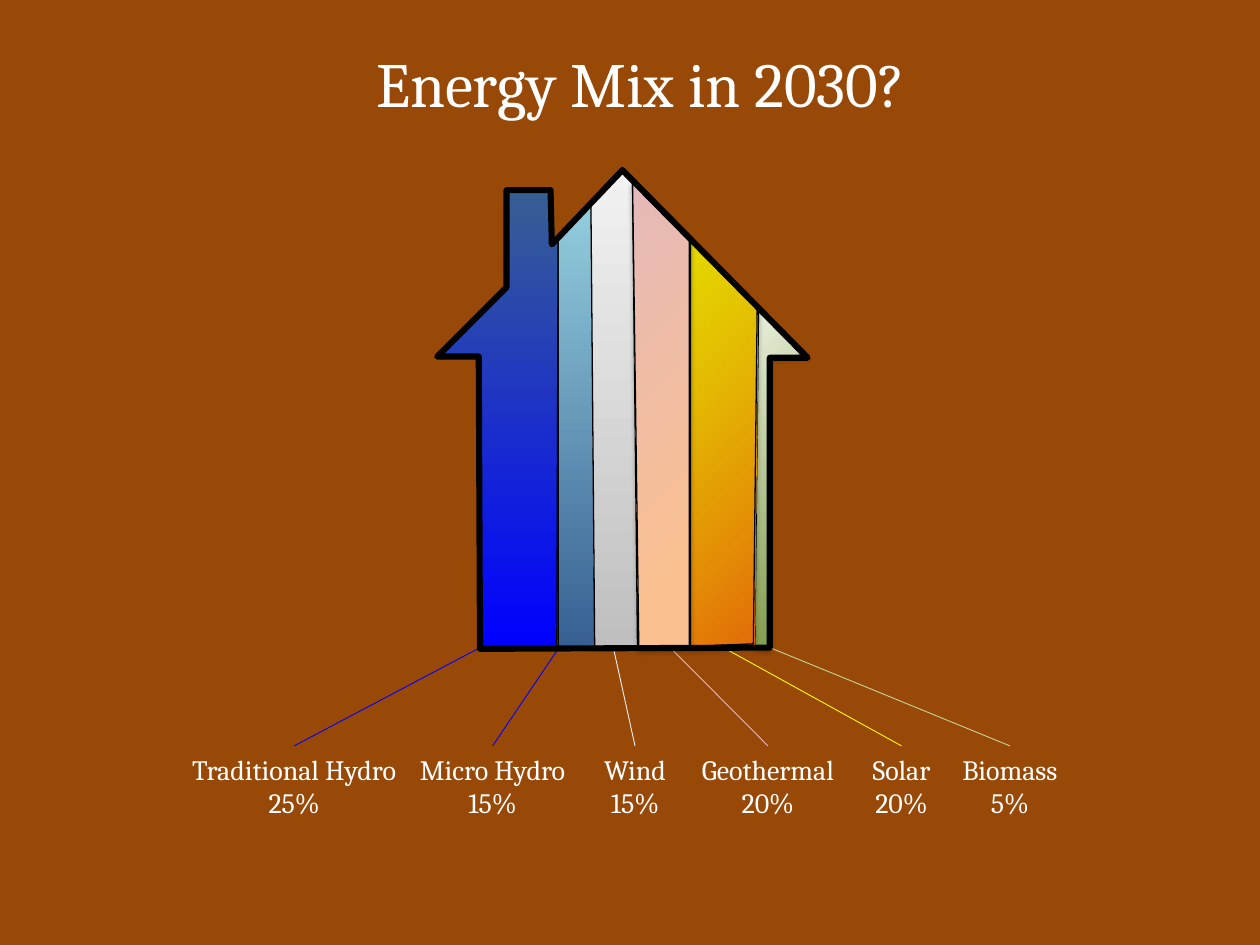
from dataclasses import dataclass

from lxml import etree
from pptx import Presentation
from pptx.dml.color import RGBColor
from pptx.enum.shapes import MSO_CONNECTOR
from pptx.enum.text import MSO_AUTO_SIZE, PP_ALIGN
from pptx.oxml.ns import qn
from pptx.util import Inches, Pt

STRAIGHT = MSO_CONNECTOR.STRAIGHT
CENTER = PP_ALIGN.CENTER
FIT_SHAPE = MSO_AUTO_SIZE.SHAPE_TO_FIT_TEXT
TOP = 0


@dataclass(frozen=True)
class Theme:
    font: str = "Cambria"
    background: str = "984807"
    text: str = "FFFFFF"
    outline: str = "000000"
    title_size: float = 36
    label_size: float = 16
    leader_width: float = 0.5
    band_width: float = 0.75
    house_width: float = 3.5
    blue: str = "0000FF"
    steel: str = "376092"
    sky: str = "93CDDD"
    white: str = "F2F2F2"
    grey: str = "BFBFBF"
    green: str = "77933C"
    pale_green: str = "EBF1DE"
    leaf: str = "C3D69B"
    orange: str = "E46C0A"
    yellow: str = "FFFF00"
    peach: str = "FAC090"
    pink: str = "E6B9B8"
    linear_shadow: tuple = ("808080", 0)
    corner_shadow: tuple = ("000000", 3.1)


def add_xml(parent, tag, **attrs):
    return etree.SubElement(parent, qn(tag), {k: str(v) for k, v in attrs.items()})


def add_color(parent, color, alpha=100):
    clr = add_xml(parent, "a:srgbClr", val=color)
    if alpha < 100:
        add_xml(clr, "a:alpha", val=alpha * 1000)


class SlideBuilder:
    def __init__(self, slide, theme):
        self.s = slide
        self.theme = theme
        fill = slide.background.fill
        fill.solid()
        fill.fore_color.rgb = RGBColor.from_string(theme.background)

    def text(self, shapes, lines, left, top, width, height, size, wrap):
        sp = shapes.add_textbox(Inches(left), Inches(top), Inches(width), Inches(height))
        tf = sp.text_frame
        tf.word_wrap = wrap
        tf.auto_size = FIT_SHAPE
        for i, line in enumerate(lines):
            p = tf.add_paragraph() if i else tf.paragraphs[0]
            p.alignment = CENTER
            r = p.add_run()
            r.text = line
            r.font.name = self.theme.font
            r.font.size = Pt(size)
            r.font.color.rgb = RGBColor.from_string(self.theme.text)
        return sp

    def leader(self, shapes, label, end, color):
        start_x = label.left + label.width // 2
        line = shapes.add_connector(STRAIGHT, start_x, label.top, Inches(end[0]), Inches(end[1]))
        line.begin_connect(label, TOP)
        line.line.color.rgb = RGBColor.from_string(color)
        line.line.width = Pt(self.theme.leader_width)
        add_xml(line._element.spPr, "a:effectLst")

    def outline(self, shapes, points, width):
        corners = [(Inches(x), Inches(y)) for x, y in points]
        fb = shapes.build_freeform(*corners[0])
        fb.add_line_segments(corners[1:], close=True)
        sp = fb.convert_to_shape()
        sp.shadow.inherit = False
        sp.fill.background()
        sp.line.color.rgb = RGBColor.from_string(self.theme.outline)
        sp.line.width = Pt(width)
        add_xml(sp._element.spPr.find(qn("a:ln")), "a:round")
        return sp

    def band(self, shapes, points, stops, from_corner):
        sp = self.outline(shapes, points, self.theme.band_width)
        self.gradient(sp, stops, from_corner)
        color, blur = self.theme.corner_shadow if from_corner else self.theme.linear_shadow
        effects = sp._element.spPr.find(qn("a:effectLst"))
        shadow = add_xml(effects, "a:outerShdw", blurRad=int(Pt(blur)), dist=int(Pt(1.8)),
                         dir=90 * 60000, rotWithShape=0)
        add_color(shadow, color, 35)

    def gradient(self, sp, stops, from_corner):
        sp.fill.gradient()
        grad = sp._element.spPr.find(qn("a:gradFill"))
        for child in list(grad):
            grad.remove(child)
        gs_list = add_xml(grad, "a:gsLst")
        for pos, *color in stops:
            add_color(add_xml(gs_list, "a:gs", pos=pos * 1000), *color)
        if from_corner:  # radiates from the bottom right
            focus = add_xml(grad, "a:path", path="circle")
            add_xml(focus, "a:fillToRect", l=100000, t=100000)
        else:  # top to bottom
            add_xml(grad, "a:lin", ang=90 * 60000, scaled=0)

    def source(self, name, share, left, width, leader_end, leader_color,
               points, stops, from_corner=False, wrap=False):
        """One energy source: label, leader line and band of the house."""
        shapes = self.s.shapes.add_group_shape().shapes
        label = self.text(shapes, [name, share], left, 5.92, width, 0.64,
                          self.theme.label_size, wrap)
        self.leader(shapes, label, leader_end, leader_color)
        self.band(shapes, points, stops, from_corner)


def main():
    prs = Presentation()
    prs.slide_width, prs.slide_height = Inches(10), Inches(7.5)
    t = Theme()
    b = SlideBuilder(prs.slides.add_slide(prs.slide_layouts[6]), t)

    # Title
    b.text(b.s.shapes, ["Energy Mix in 2030?"], 2.11, 0.3, 5.95, 0.71, t.title_size, True)

    # Energy sources, back to front
    b.source("Micro Hydro", "15%", 3.21, 1.4, (4.43, 5.15), t.blue,
             [(4.7, 1.61), (4.72, 5.14), (4.43, 5.15), (4.43, 1.89)],
             [(0, t.sky), (100, t.steel)])
    b.source("Traditional Hydro", "25%", 1.38, 1.91, (3.81, 5.14), t.blue,
             [(4.43, 1.87), (4.42, 5.14), (3.8, 5.14), (3.8, 2.82), (3.46, 2.82),
              (4.03, 2.28), (4.03, 1.49), (4.37, 1.49), (4.37, 1.93)],
             [(0, t.steel), (100, t.blue)])
    b.source("Wind", "15%", 4.68, 0.72, (4.85, 5.06), t.white,
             [(5.02, 1.41), (5.06, 5.14), (4.72, 5.13), (4.69, 1.6), (4.94, 1.34)],
             [(0, t.white), (100, t.grey)])
    b.source("Biomass", "5%", 7.51, 1.01, (6.11, 5.14), t.leaf,
             [(5.99, 5.13), (6.02, 2.44), (6.41, 2.82), (6.11, 2.83), (6.11, 5.14)],
             [(0, t.green), (100, t.pale_green)], from_corner=True, wrap=True)
    b.source("Solar", "20%", 6.8, 0.71, (5.67, 5.1), t.yellow,
             [(5.48, 1.89), (5.48, 5.13), (5.98, 5.11), (6.01, 2.44)],
             [(0, t.orange), (100, t.yellow, 82)], from_corner=True)
    b.source("Geothermal", "20%", 5.43, 1.33, (5.29, 5.11), t.pink,
             [(5.02, 1.43), (5.07, 5.14), (5.47, 5.13), (5.47, 1.89)],
             [(14, t.peach), (100, t.pink)], from_corner=True)

    # House outline
    b.outline(b.s.shapes,
              [(4.94, 1.35), (4.38, 1.94), (4.37, 1.51), (4.02, 1.51), (4.02, 2.28),
               (3.47, 2.83), (3.8, 2.83), (3.81, 5.15), (6.11, 5.14), (6.11, 2.84),
               (6.41, 2.84)], t.house_width)

    prs.save("out.pptx")


if __name__ == "__main__":
    main()
